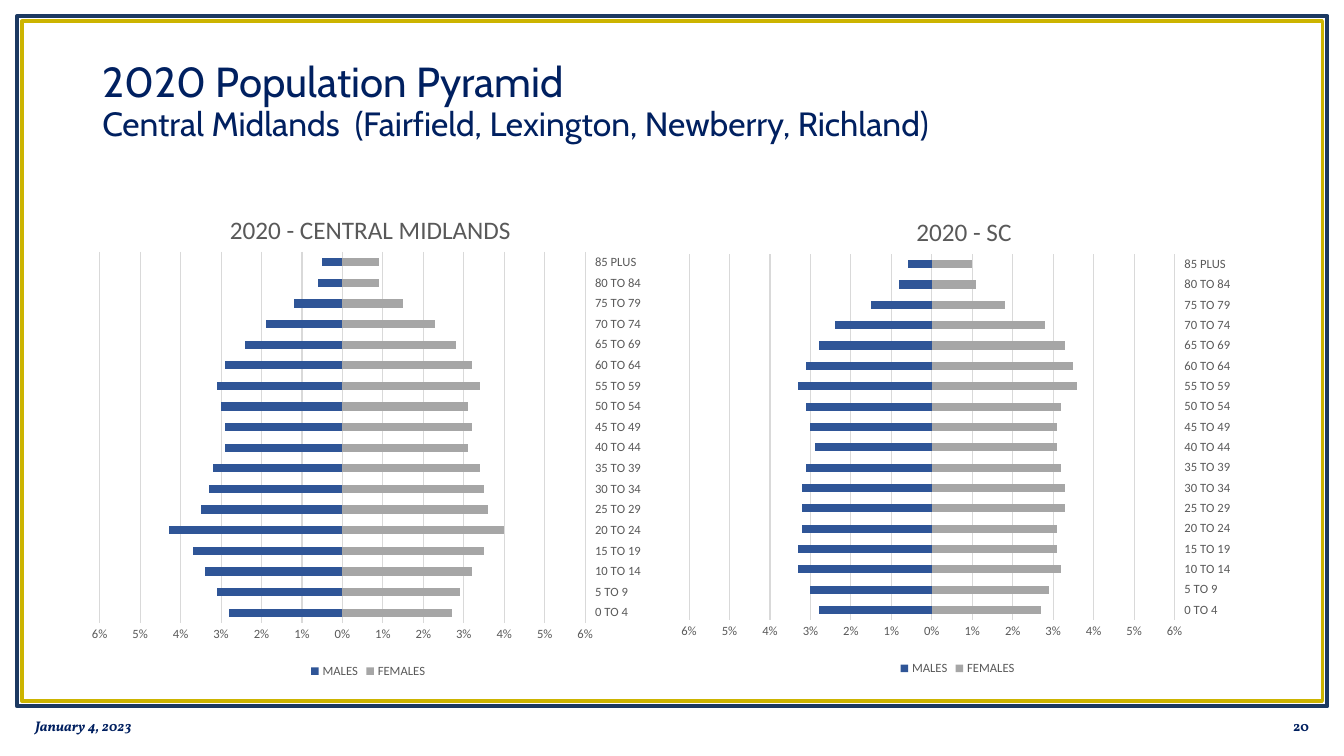
from collections import namedtuple
from dataclasses import dataclass

from lxml import etree
from pptx import Presentation, util as u
from pptx.chart.data import CategoryChartData
from pptx.dml.color import RGBColor
from pptx.enum import chart as charts, shapes, text
from pptx.oxml.ns import qn

Box = namedtuple("Box", "left top width height")


@dataclass(frozen=True)
class Theme:
    navy: str = "002060"
    frame_blue: str = "1C3961"
    frame_gold: str = "CCB400"
    males: str = "2F5597"
    females: str = "A6A6A6"
    grey: str = "595959"
    grid: str = "D9D9D9"
    title_font: str = "Cabin"
    footer_font: str = "Vollkorn"
    chart_font: str = "Calibri"
    title_size: float = 30
    subtitle_size: float = 24
    chart_title_size: float = 18
    label_size: float = 9
    footer_size: float = 10


THEME = Theme()
AGES = [f"{start} TO {start + 4}" for start in range(0, 85, 5)] + ["85 PLUS"]
MIDLANDS = {
    "MALES": [-.028, -.031, -.034, -.037, -.043, -.035, -.033, -.032, -.029,
              -.029, -.03, -.031, -.029, -.024, -.019, -.012, -.006, -.005],
    "FEMALES": [.027, .029, .032, .035, .04, .036, .035, .034, .031,
                .032, .031, .034, .032, .028, .023, .015, .009, .009],
}
STATE = {
    "MALES": [-.028, -.03, -.033, -.033, -.032, -.032, -.032, -.031, -.029,
              -.03, -.031, -.033, -.031, -.028, -.024, -.015, -.008, -.006],
    "FEMALES": [.027, .029, .032, .031, .031, .033, .033, .032, .031,
                .031, .032, .036, .035, .033, .028, .018, .011, .01],
}


def points(box):
    return [u.Pt(length) for length in box]


def style(font, name, size, color, bold=False, italic=False):
    font.name, font.size = name, u.Pt(size)
    font.bold, font.italic = bold, italic
    font.color.rgb = RGBColor.from_string(color)


def set_line(line, color, width):
    line.color.rgb = RGBColor.from_string(color)
    line.width = u.Pt(width)


def add_frame(slide, box):
    """Blue outer border with a gold one just inside it."""
    inset = 3.6
    inner = Box(box.left + inset, box.top + inset,
                box.width - 2 * inset, box.height - 2 * inset)
    for border, color, width in ((box, THEME.frame_blue, 3),
                                 (inner, THEME.frame_gold, 2.5)):
        frame = slide.shapes.add_shape(shapes.MSO_SHAPE.RECTANGLE, *points(border))
        frame.shadow.inherit = False
        frame.fill.background()
        set_line(frame.line, color, width)


def add_text(slide, box, words, align=text.PP_ALIGN.LEFT):
    words_box = slide.shapes.add_textbox(*points(box))
    frame = words_box.text_frame
    frame.word_wrap = True
    frame.vertical_anchor = text.MSO_ANCHOR.MIDDLE
    paragraph = frame.paragraphs[0]
    paragraph.text = words
    paragraph.alignment = align
    return paragraph


def add_heading(slide, box, title, subtitle):
    heading = add_text(slide, box, f"{title}\v{subtitle}")
    heading.line_spacing = 0.9
    for run, size in zip(heading.runs, (THEME.title_size, THEME.subtitle_size)):
        style(run.font, THEME.title_font, size, THEME.navy)


def add_footer(slide, box, date, number):
    """Date at the left end of the strip, slide number at the right end."""
    width = 216
    right = box.left + box.width - width
    for left, words, align, italic in (
            (box.left, date, text.PP_ALIGN.LEFT, True),
            (right, number, text.PP_ALIGN.RIGHT, False)):
        part = add_text(slide, Box(left, box.top, width, box.height), words, align)
        style(part.runs[0].font, THEME.footer_font, THEME.footer_size,
              THEME.navy, bold=True, italic=italic)


def set_layout(parent, index, **settings):
    """Give a chart part a manual layout, in fractions of the chart."""
    for old in parent.findall(qn("c:layout")):
        parent.remove(old)
    layout = etree.Element(qn("c:layout"))
    manual = etree.SubElement(layout, qn("c:manualLayout"))
    for tag, value in settings.items():
        etree.SubElement(manual, qn(f"c:{tag}")).set("val", str(value))
    parent.insert(index, layout)


def add_pyramid(slide, box, title, series, title_at, plot_at):
    data = CategoryChartData(number_format="0%;0%")
    data.categories = AGES
    for name, shares in series.items():
        data.add_series(name, shares)
    pyramid = slide.shapes.add_chart(
        charts.XL_CHART_TYPE.BAR_STACKED, *points(box), data).chart
    style(pyramid.font, THEME.chart_font, THEME.label_size, THEME.grey)

    # Title
    pyramid.has_title = True
    heading = pyramid.chart_title.text_frame
    heading.text = title
    style(heading.paragraphs[0].runs[0].font, THEME.chart_font,
          THEME.chart_title_size, THEME.grey)
    pyramid.chart_title.include_in_layout = False
    set_layout(pyramid.chart_title._element, 1, xMode="edge", yMode="edge",
               x=title_at[0], y=title_at[1])

    # Bars
    plot = pyramid.plots[0]
    plot.gap_width, plot.overlap = 150, 100
    plot.vary_by_categories = False
    for bars, color in zip(plot.series, (THEME.males, THEME.females)):
        bars.invert_if_negative = False
        bars.format.fill.solid()
        bars.format.fill.fore_color.rgb = RGBColor.from_string(color)
    plot_area = pyramid._chartSpace.chart.plotArea
    set_layout(plot_area, 0, layoutTarget="inner", xMode="edge", yMode="edge",
               x=plot_at.left, y=plot_at.top, w=plot_at.width, h=plot_at.height)

    # Axes
    ages, shares = pyramid.category_axis, pyramid.value_axis
    for axis in (ages, shares):
        axis.major_tick_mark = axis.minor_tick_mark = charts.XL_TICK_MARK.NONE
        style(axis.tick_labels.font, THEME.chart_font, THEME.label_size, THEME.grey)
    ages.tick_label_position = charts.XL_TICK_LABEL_POSITION.HIGH
    ages.has_major_gridlines = False
    set_line(ages.format.line, THEME.grid, 0.75)
    shares.minimum_scale, shares.maximum_scale = -0.06, 0.06
    shares.major_unit = 0.01
    shares.tick_labels.number_format = "0%;0%"
    shares.tick_labels.number_format_is_linked = False
    shares.format.line.fill.background()
    shares.has_major_gridlines = True
    set_line(shares.major_gridlines.format.line, THEME.grid, 0.75)

    # Legend
    pyramid.has_legend = True
    pyramid.legend.position = charts.XL_LEGEND_POSITION.BOTTOM
    pyramid.legend.include_in_layout = False
    style(pyramid.legend.font, THEME.chart_font, THEME.label_size, THEME.grey)


def main():
    deck = Presentation()
    deck.slide_width, deck.slide_height = u.Pt(960), u.Pt(540)
    slide = deck.slides.add_slide(deck.slide_layouts[6])
    add_frame(slide, Box(12.2, 11.5, 936, 493))
    add_heading(slide, Box(66, 29, 828, 88.5), "2020 Population Pyramid",
                "Central Midlands  (Fairfield, Lexington, Newberry, Richland)")
    add_footer(slide, Box(18, 504, 924, 29), "January 4, 2023", "20")
    add_pyramid(slide, Box(59, 134, 408, 353.5), "2020 - CENTRAL MIDLANDS",
                MIDLANDS, (0.25, 0.04), Box(0.03, 0.13, 0.85, 0.75))
    add_pyramid(slide, Box(480, 132, 408, 353.5), "2020 - SC",
                STATE, (0.42, 0.05), Box(0.03, 0.14, 0.85, 0.74))
    deck.save("out.pptx")


if __name__ == "__main__":
    main()
